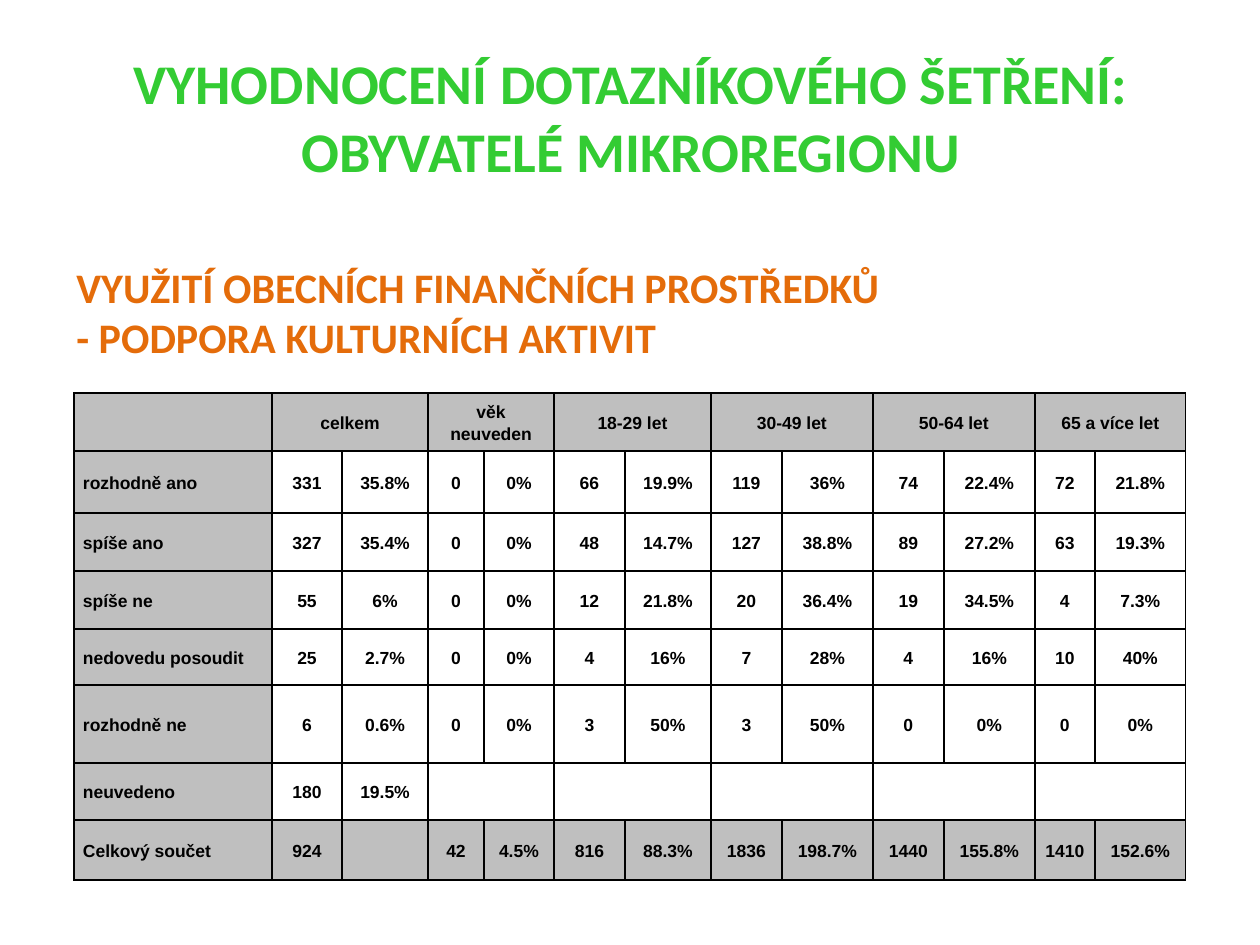
from lxml import etree
from pptx import Presentation
from pptx.dml.color import RGBColor
from pptx.enum.text import MSO_ANCHOR, PP_ALIGN
from pptx.oxml.ns import qn
from pptx.util import Pt

LEFT, CENTER = PP_ALIGN.LEFT, PP_ALIGN.CENTER
TOP, MIDDLE = MSO_ANCHOR.TOP, MSO_ANCHOR.MIDDLE
PX = 914400 // 126
GREEN, ORANGE, BROWN, GRAY, BLACK = "33CC33", "E46C0A", "AA4214", "BFBFBF", "000000"

TITLE = "VYHODNOCENÍ DOTAZNÍKOVÉHO ŠETŘENÍ:\vOBYVATELÉ MIKROREGIONU"
SUBTITLE = "VYUŽITÍ OBECNÍCH FINANČNÍCH PROSTŘEDKŮ\n- PODPORA KULTURNÍCH AKTIVIT"
GROUPS = ["celkem", "věk neuveden", "18-29 let", "30-49 let", "50-64 let", "65 a více let"]
ANSWERS = [
    ["rozhodně ano", "331", "35.8%", "0", "0%", "66", "19.9%", "119", "36%", "74", "22.4%", "72", "21.8%"],
    ["spíše ano", "327", "35.4%", "0", "0%", "48", "14.7%", "127", "38.8%", "89", "27.2%", "63", "19.3%"],
    ["spíše ne", "55", "6%", "0", "0%", "12", "21.8%", "20", "36.4%", "19", "34.5%", "4", "7.3%"],
    ["nedovedu posoudit", "25", "2.7%", "0", "0%", "4", "16%", "7", "28%", "4", "16%", "10", "40%"],
    ["rozhodně ne", "6", "0.6%", "0", "0%", "3", "50%", "3", "50%", "0", "0%", "0", "0%"],
    ["neuvedeno", "180", "19.5%"] + [""] * 10,
    ["Celkový součet", "924", "", "42", "4.5%", "816", "88.3%", "1836", "198.7%", "1440", "155.8%", "1410", "152.6%"],
]
COLUMN_WIDTHS = [198, 70, 86, 56, 70, 71, 86, 71, 91, 71, 91, 60, 91]
ROW_HEIGHTS = [58, 62, 58, 58, 56, 78, 57, 60]
TABLE_LEFT, TABLE_TOP = 74, 393


def rgb(value):
    """Turn a hex string into a colour."""
    return RGBColor.from_string(value)


def add_line(parent, tag, color, width):
    """Append a solid line element to its parent and return it."""
    line = etree.SubElement(parent, qn(tag), w=str(int(Pt(width))))
    fill = etree.SubElement(line, qn("a:solidFill"))
    etree.SubElement(fill, qn("a:srgbClr"), val=color)
    return line


def write(frame, text, size=10, font="Arial", color=BLACK, align=CENTER, spacing=None, outline=None):
    """Fill a text frame with bold text in one format."""
    frame.word_wrap = True
    frame.text = text
    for paragraph in frame.paragraphs:
        paragraph.alignment = align
        paragraph.line_spacing = spacing
        for run in paragraph.runs:
            run.font.size, run.font.name, run.font.bold = Pt(size), font, True
            run.font.color.rgb = rgb(color)
            if outline:
                properties = run.font._element
                properties.insert(0, add_line(properties, "a:ln", outline, 0.71))


def add_heading(slide, text, box, anchor, **text_format):
    """Add a heading in a text box."""
    frame = slide.shapes.add_textbox(*(length * PX for length in box)).text_frame
    frame.vertical_anchor = anchor
    write(frame, text, font="Calibri", outline=BROWN, **text_format)


def style_cell(cell, shaded):
    """Set the margins, borders and fill of a cell."""
    cell.margin_left = cell.margin_right = 9 * PX
    cell.margin_top = cell.margin_bottom = 0
    cell.vertical_anchor = MIDDLE
    properties = cell._tc.get_or_add_tcPr()
    for side in ("a:lnL", "a:lnR", "a:lnT", "a:lnB"):
        add_line(properties, side, BLACK, 1)
    if shaded:
        cell.fill.solid()
        cell.fill.fore_color.rgb = rgb(GRAY)
    else:
        cell.fill.background()


def add_answer_table(slide):
    """Add the table of answers by age group."""
    header = [""] + [text for group in GROUPS for text in (group, "")]
    rows = [header] + ANSWERS
    last = len(rows) - 1
    box = (TABLE_LEFT, TABLE_TOP, sum(COLUMN_WIDTHS), sum(ROW_HEIGHTS))
    table = slide.shapes.add_table(len(rows), len(header), *(length * PX for length in box)).table
    table.first_row = table.horz_banding = False
    for column, width in zip(table.columns, COLUMN_WIDTHS):
        column.width = width * PX
    for row, height in zip(table.rows, ROW_HEIGHTS):
        row.height = height * PX
    for row_index, texts in enumerate(rows):
        for column_index, text in enumerate(texts):
            cell = table.cell(row_index, column_index)
            style_cell(cell, column_index == 0 or row_index in (0, last))
            write(cell.text_frame, text, align=CENTER if column_index else LEFT, spacing=1.15)
    for row_index, first_column in ((0, 1), (last - 1, 3)):
        for column_index in range(first_column, len(header), 2):
            table.cell(row_index, column_index).merge(table.cell(row_index, column_index + 1))


def main():
    """Build and save the slide."""
    presentation = Presentation()
    presentation.slide_width, presentation.slide_height = 1260 * PX, 945 * PX
    slide = presentation.slides.add_slide(presentation.slide_layouts[6])
    add_heading(slide, TITLE, (64, 37, 1134, 158), MIDDLE, size=32, color=GREEN)
    add_heading(slide, SUBTITLE, (64, 255, 1121, 115), TOP, size=24, color=ORANGE, align=LEFT)
    add_answer_table(slide)
    presentation.save("out.pptx")


if __name__ == "__main__":
    main()
